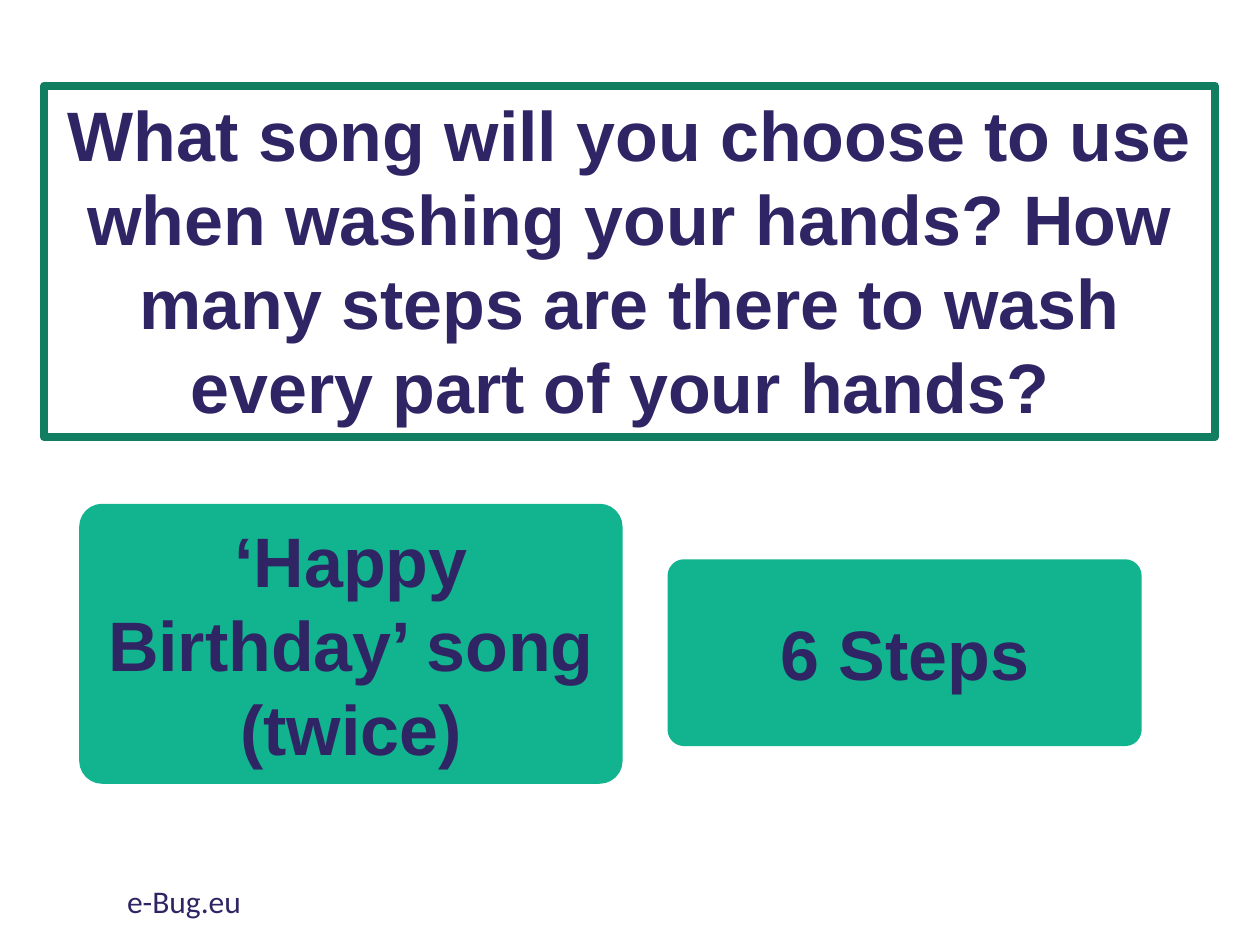
import pptx
import pptx.util
import pptx.dml.color
import pptx.enum.shapes
import pptx.enum.text

Inches = pptx.util.Inches
Pt = pptx.util.Pt
SHAPES = pptx.enum.shapes.MSO_SHAPE
ANCHORS = pptx.enum.text.MSO_ANCHOR
AUTO_SIZES = pptx.enum.text.MSO_AUTO_SIZE
CENTER = pptx.enum.text.PP_ALIGN.CENTER

COLORS = {
    "white": "FFFFFF",
    "border": "117E62",
    "green": "12B38F",
    "navy": "302564",
}
HEADLINE_FONT = {"name": "Arial", "size": Pt(40), "bold": True}
FOOTER_FONT = {"name": "Calibri", "size": Pt(18)}


def color(name):
    return pptx.dml.color.RGBColor.from_string(COLORS[name])


def write_text(shape, text, font_format, frame_format):
    frame = shape.text_frame
    frame.word_wrap = True
    for attribute, value in frame_format.items():
        setattr(frame, attribute, value)
    paragraph = frame.paragraphs[0]
    run = paragraph.add_run()
    run.text = text
    for attribute, value in font_format.items():
        setattr(run.font, attribute, value)
    run.font.color.rgb = color("navy")
    return paragraph


presentation = pptx.Presentation()
presentation.slide_width = Inches(10)
presentation.slide_height = Inches(7.5)
slide = presentation.slides.add_slide(presentation.slide_layouts[6])

# Question box and the two answer boxes
question_frame = {
    "vertical_anchor": ANCHORS.TOP,
    "auto_size": AUTO_SIZES.SHAPE_TO_FIT_TEXT,
}
answer_frame = {"vertical_anchor": ANCHORS.MIDDLE}
boxes = [
    (SHAPES.RECTANGLE, (0.35, 0.68, 9.29, 2.79), "white", "border", question_frame,
     "What song will you choose to use when washing your hands? "
     "How many steps are there to wash every part of your hands? "),
    (SHAPES.ROUNDED_RECTANGLE, (0.66, 4.03, 4.25, 2.16), "green", "green", answer_frame,
     "‘Happy Birthday’ song (twice)"),
    (SHAPES.ROUNDED_RECTANGLE, (5.33, 4.47, 3.7, 1.42), "green", "green", answer_frame,
     "6 Steps"),
]
for preset, position, fill, line, frame_format, text in boxes:
    shape = slide.shapes.add_shape(preset, *map(Inches, position))
    shape.shadow.inherit = False
    shape.fill.solid()
    shape.fill.fore_color.rgb = color(fill)
    shape.line.color.rgb = color(line)
    shape.line.width = Pt(4.5)
    if preset == SHAPES.ROUNDED_RECTANGLE:
        shape.adjustments[0] = 0.07
    paragraph = write_text(shape, text, HEADLINE_FONT, frame_format)
    paragraph.alignment = CENTER

# Footer web address
footer = slide.shapes.add_textbox(*map(Inches, (0.91, 6.95, 3.38, 0.4)))
write_text(footer, "e-Bug.eu", FOOTER_FONT, {})

presentation.save("out.pptx")
